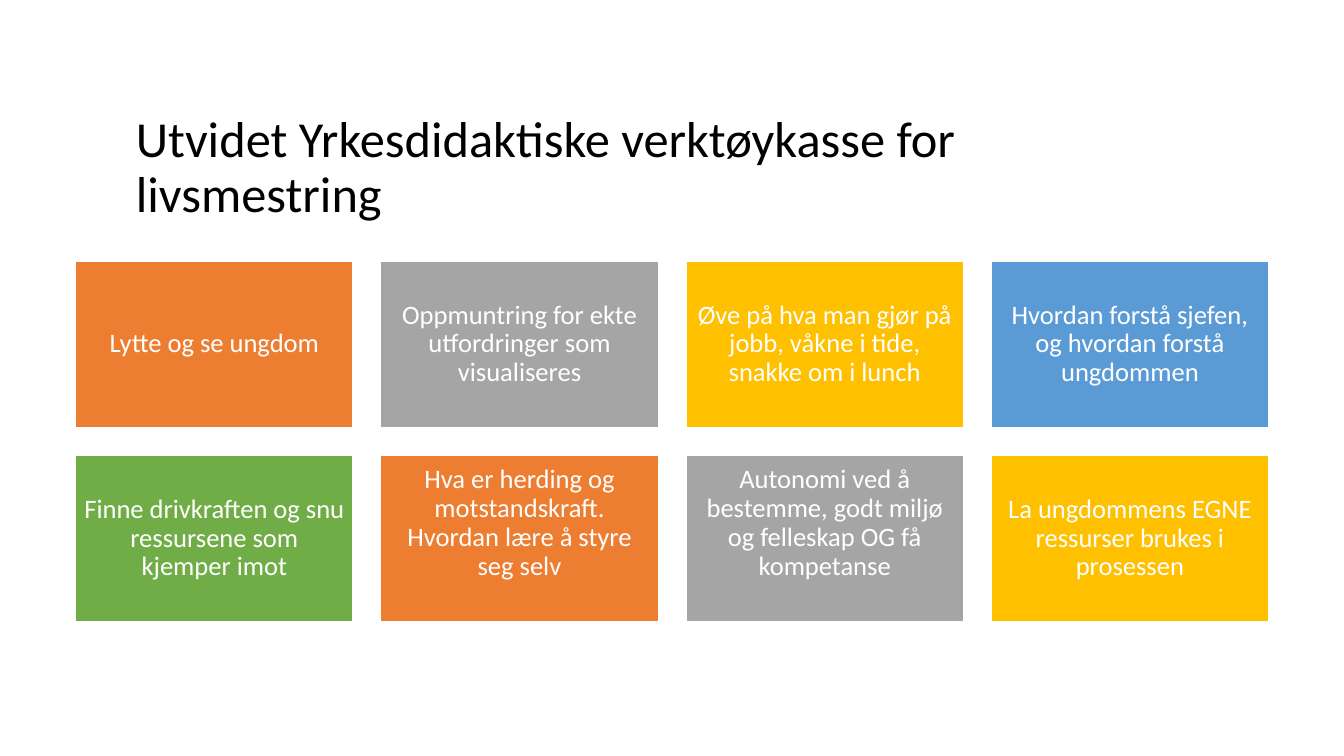
from pptx import Presentation
from pptx.dml.color import RGBColor
from pptx.enum.shapes import MSO_SHAPE
from pptx.enum.text import MSO_ANCHOR, PP_ALIGN
from pptx.util import Pt

COLOURS = {
    "text": "000000",
    "white": "FFFFFF",
    "orange": "ED7D31",
    "grey": "A5A5A5",
    "yellow": "FFC000",
    "blue": "5B9BD5",
    "green": "70AD47",
}

TITLE = "Utvidet Yrkesdidaktiske verktøykasse for livsmestring"

# Text, colour, and whether the text ends with a line break
CARDS = [
    ("Lytte og se ungdom", "orange", False),
    ("Oppmuntring for ekte utfordringer som visualiseres", "grey", False),
    ("Øve på hva man gjør på jobb, våkne i tide, snakke om i lunch", "yellow", False),
    ("Hvordan forstå sjefen, og hvordan forstå ungdommen", "blue", False),
    ("Finne drivkraften og snu ressursene som kjemper imot", "green", False),
    ("Hva er herding og motstandskraft. Hvordan lære å styre seg selv", "orange", True),
    ("Autonomi ved å bestemme, godt miljø og felleskap OG få kompetanse", "grey", True),
    ("La ungdommens EGNE ressurser brukes i prosessen", "yellow", False),
]
COLUMNS = 4
GRID_LEFT, GRID_TOP = 54, 186.5
CARD_WIDTH, CARD_HEIGHT = 198.2, 118.9
GAP = 19.8
CARD_INSET = 5.7


def colour(name):
    return RGBColor.from_string(COLOURS[name])


def add_run(paragraph, text, size, colour_name):
    paragraph.line_spacing = 0.9
    run = paragraph.add_run()
    run.text = text
    run.font.name = "Calibri"
    run.font.size = Pt(size)
    run.font.color.rgb = colour(colour_name)


def add_title(slide):
    box = slide.shapes.add_textbox(Pt(90), Pt(78), Pt(776), Pt(54))
    box.text_frame.word_wrap = True
    add_run(box.text_frame.paragraphs[0], TITLE, 36, "text")


def add_card(slide, left, top, text, fill, ends_with_break):
    card = slide.shapes.add_shape(
        MSO_SHAPE.RECTANGLE, Pt(left), Pt(top), Pt(CARD_WIDTH), Pt(CARD_HEIGHT))
    card.shadow.inherit = False
    card.fill.solid()
    card.fill.fore_color.rgb = colour(fill)
    card.line.color.rgb = colour("white")
    card.line.width = Pt(1)

    frame = card.text_frame
    frame.word_wrap = True
    frame.vertical_anchor = MSO_ANCHOR.MIDDLE
    frame.margin_left = frame.margin_right = Pt(CARD_INSET)
    frame.margin_top = frame.margin_bottom = Pt(CARD_INSET)
    paragraph = frame.paragraphs[0]
    paragraph.alignment = PP_ALIGN.CENTER
    add_run(paragraph, text, 19, "white")
    if ends_with_break:
        paragraph.add_line_break()


def main():
    presentation = Presentation()
    presentation.slide_width = Pt(960)
    presentation.slide_height = Pt(540)
    slide = presentation.slides.add_slide(presentation.slide_layouts[6])

    add_title(slide)
    for index, (text, fill, ends_with_break) in enumerate(CARDS):
        row, column = divmod(index, COLUMNS)
        left = GRID_LEFT + column * (CARD_WIDTH + GAP)
        top = GRID_TOP + row * (CARD_HEIGHT + GAP)
        add_card(slide, left, top, text, fill, ends_with_break)

    presentation.save("out.pptx")


if __name__ == "__main__":
    main()
